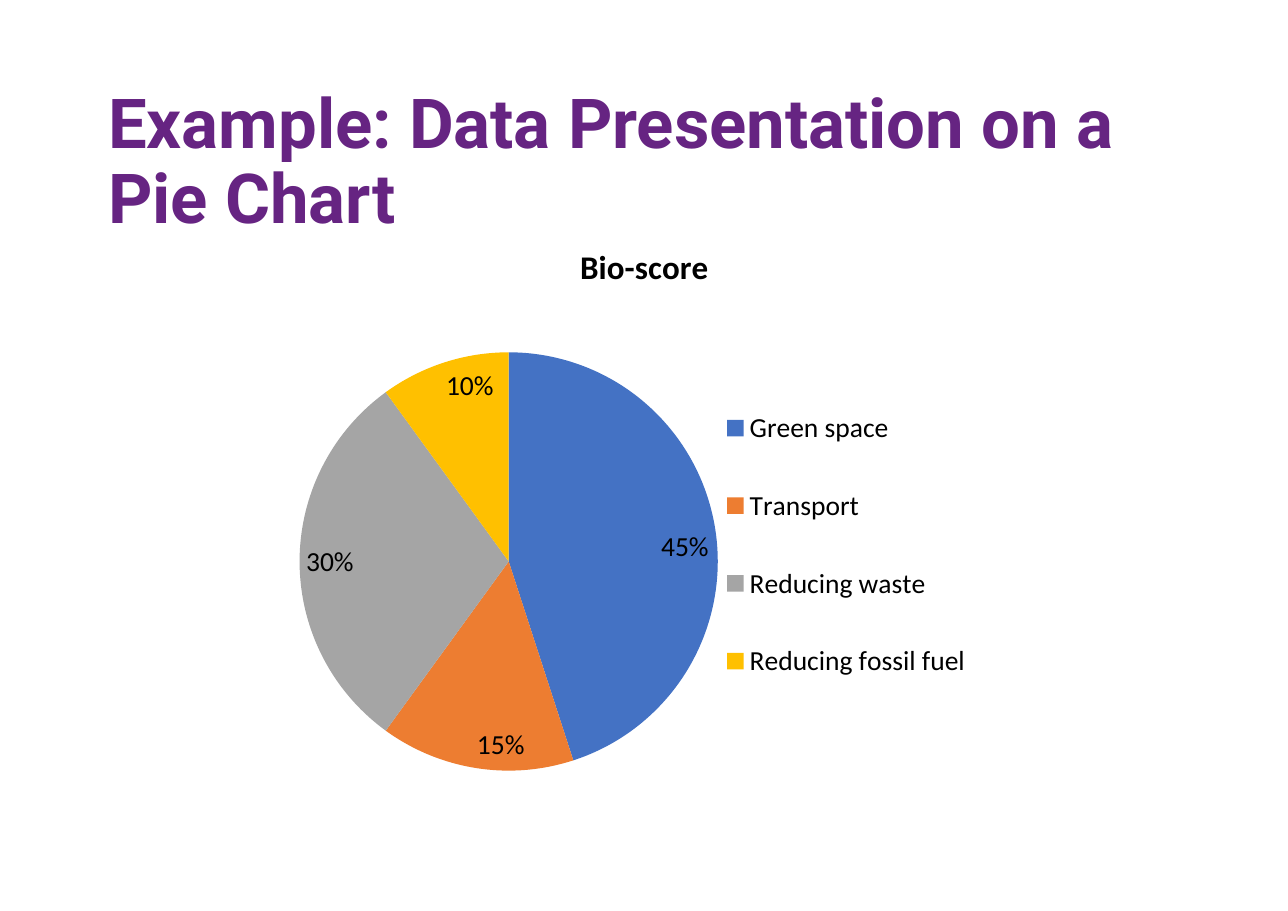
from typing import NamedTuple

from lxml.etree import SubElement
from pptx import Presentation
from pptx.chart.chart import Chart
from pptx.chart.data import CategoryChartData
from pptx.dml.color import RGBColor
from pptx.enum.chart import XL_CHART_TYPE as ChartType
from pptx.enum.chart import XL_LABEL_POSITION as LabelPos
from pptx.enum.chart import XL_LEGEND_POSITION as LegendPos
from pptx.enum.text import MSO_ANCHOR, MSO_AUTO_SIZE, PP_ALIGN
from pptx.oxml.ns import qn
from pptx.slide import Slide
from pptx.util import Cm, Pt

PURPLE = RGBColor(0x66, 0x24, 0x82)
BLACK = RGBColor(0, 0, 0)
BLUE = RGBColor(0x44, 0x72, 0xC4)
ORANGE = RGBColor(0xED, 0x7D, 0x31)
GREY = RGBColor(0xA5, 0xA5, 0xA5)
YELLOW = RGBColor(0xFF, 0xC0, 0x00)


class Slice(NamedTuple):
    name: str
    percent: int
    color: RGBColor


class Area(NamedTuple):
    """Part of the chart, in fractions of its width and height."""
    x: float
    y: float
    w: float
    h: float


SLICES = [
    Slice("Green space", 45, BLUE),
    Slice("Transport", 15, ORANGE),
    Slice("Reducing waste", 30, GREY),
    Slice("Reducing fossil fuel", 10, YELLOW),
]
PIE_AREA = Area(0.03, 0.23, 0.57, 0.75)
LEGEND_AREA = Area(0.6, 0.26, 0.35, 0.63)


def set_layout(parent, area: Area, index: int, inner: bool = False) -> None:
    """Place a chart part by a manual layout, as child number index."""
    for old in parent.findall(qn("c:layout")):
        parent.remove(old)
    layout = parent.makeelement(qn("c:layout"))
    parent.insert(index, layout)
    manual = SubElement(layout, qn("c:manualLayout"))
    if inner:
        SubElement(manual, qn("c:layoutTarget")).set("val", "inner")
    for mode in ("xMode", "yMode"):
        SubElement(manual, qn(f"c:{mode}")).set("val", "edge")
    for key, value in area._asdict().items():
        SubElement(manual, qn(f"c:{key}")).set("val", str(value))


def format_title(s: Slide) -> None:
    title = s.shapes.title
    title.left, title.top = Cm(2.24), Cm(3.28)
    title.width, title.height = Cm(25.25), Cm(2.34)
    tf = title.text_frame
    tf.text = "Example: Data Presentation on a Pie Chart"
    tf.word_wrap = True
    tf.auto_size = MSO_AUTO_SIZE.NONE
    tf.vertical_anchor = MSO_ANCHOR.BOTTOM
    p = tf.paragraphs[0]
    p.alignment = PP_ALIGN.LEFT
    p.line_spacing = 0.9
    p.font.name, p.font.size, p.font.bold = "Roboto", Pt(45), True
    p.font.color.rgb = PURPLE


def format_chart_title(chart: Chart) -> None:
    chart.has_title = True
    tf = chart.chart_title.text_frame
    tf.text = "Bio-score"
    font = tf.paragraphs[0].font
    font.name, font.size, font.bold = "Calibri", Pt(21.6), True
    font.color.rgb = BLACK


def add_pie(s: Slide) -> None:
    data = CategoryChartData()
    data.categories = [item.name for item in SLICES]
    data.add_series("Series 1", [item.percent for item in SLICES])
    chart = s.shapes.add_chart(ChartType.PIE, Cm(6.4), Cm(5.08),
                               Cm(16.92), Cm(13), data).chart
    chart.font.name, chart.font.size = "Calibri", Pt(18)
    chart.font.color.rgb = BLACK
    format_chart_title(chart)

    chart.has_legend = True
    chart.legend.position = LegendPos.RIGHT
    chart.legend.include_in_layout = False
    set_layout(chart.legend._element, LEGEND_AREA, 1)

    plot = chart.plots[0]
    plot.vary_by_categories = True
    set_layout(plot._element.getparent(), PIE_AREA, 0, inner=True)
    for i, item in enumerate(SLICES):
        fill = plot.series[0].points[i].format.fill
        fill.solid()
        fill.fore_color.rgb = item.color

    plot.has_data_labels = True
    labels = plot.data_labels
    labels.show_value, labels.show_percentage = False, True
    labels.number_format, labels.number_format_is_linked = "0%", False
    labels.position = LabelPos.INSIDE_END


def main() -> None:
    prs = Presentation()
    prs.slide_width, prs.slide_height = Cm(29.7), Cm(21)
    s = prs.slides.add_slide(prs.slide_layouts[5])
    format_title(s)
    add_pie(s)
    prs.save("out.pptx")


if __name__ == "__main__":
    main()
